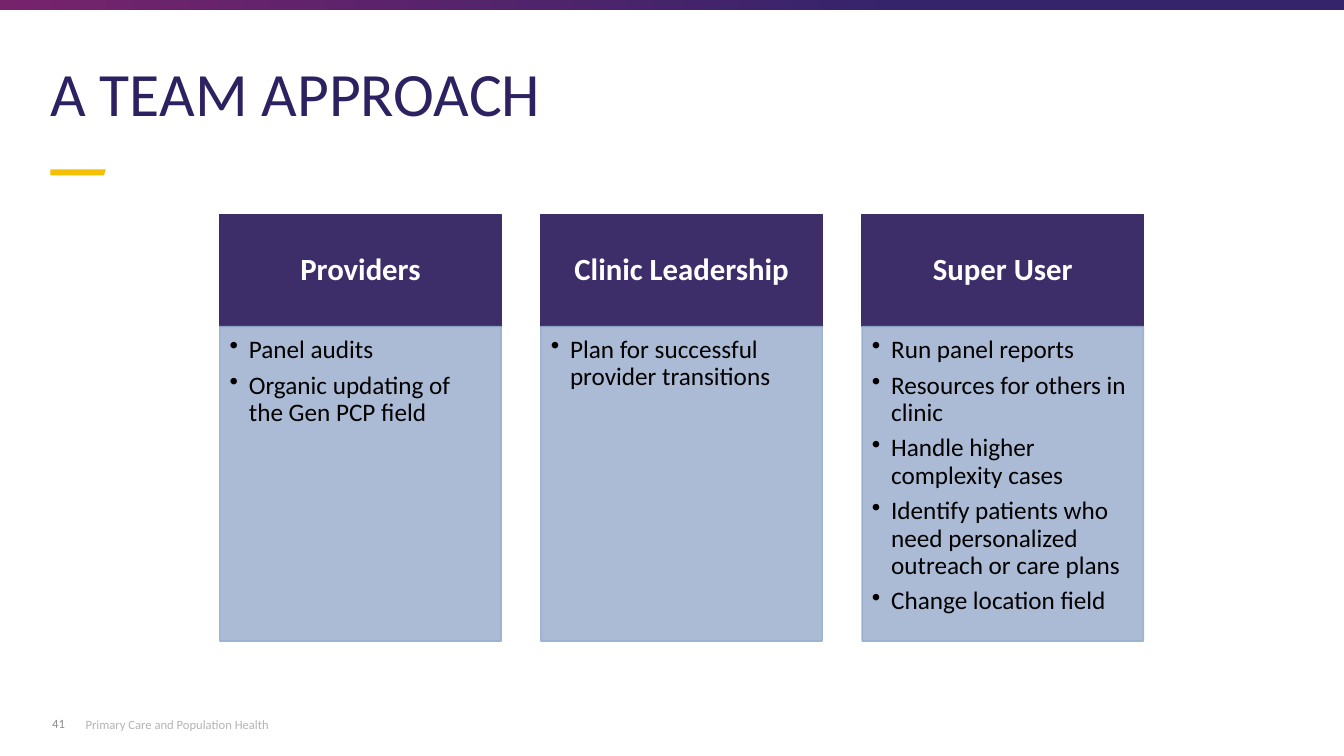
from dataclasses import dataclass
from lxml import etree
from pptx import Presentation
from pptx import util as u
from pptx.dml import color
from pptx.enum import shapes, text
from pptx.oxml import ns

FONT = "Calibri"
LEFT, STEP, WIDTH = 2.18, 3.185, 2.79
HEAD_TOP, HEAD_TALL = 2.13, 1.11
BODY_TOP, BODY_TALL = 3.24, 3.12


@dataclass
class Role:
    name: str
    tasks: list[str]


@dataclass
class Note:
    words: str
    box: tuple[float, float, float, float]
    hue: str
    anchor: text.MSO_ANCHOR


ROLES = [
    Role("Providers", ["Panel audits", "Organic updating of the Gen PCP field"]),
    Role("Clinic Leadership", ["Plan for successful provider transitions"]),
    Role("Super User", [
        "Run panel reports",
        "Resources for others in clinic",
        "Handle higher complexity cases",
        "Identify patients who need personalized outreach or care plans",
        "Change location field",
    ]),
]

NOTES = [
    Note("41", (0.42, 6.98, 0.46, 0.4), "8C8C8C", text.MSO_ANCHOR.MIDDLE),
    Note("Primary Care and Population Health", (0.75, 7.06, 2.64, 0.3),
         "B5B4B4", text.MSO_ANCHOR.TOP),
]


def rgb(code: str) -> color.RGBColor:
    return color.RGBColor.from_string(code)


def place(box: tuple) -> list:
    return [u.Inches(side) for side in box]


def write(para, words: str, size: float, hue: str, bold: bool = False) -> None:
    run = para.add_run()
    run.text = words
    run.font.name = FONT
    run.font.size = u.Pt(size)
    run.font.bold = bold
    run.font.color.rgb = rgb(hue)


def inset(frame, left: float, top: float, right: float, base: float) -> None:
    frame.word_wrap = True
    frame.margin_left, frame.margin_top = u.Inches(left), u.Inches(top)
    frame.margin_right, frame.margin_bottom = u.Inches(right), u.Inches(base)


def fade(shape, route: str, share: int) -> None:
    for tone in shape.element.spPr.xpath(route):
        etree.SubElement(tone, ns.qn("a:alpha"), val=str(share * 1000))


def block(slide, box: tuple, fill: str, line: str):
    shape = slide.shapes.add_shape(shapes.MSO_SHAPE.RECTANGLE, *place(box))
    shape.shadow.inherit = False
    shape.fill.solid()
    shape.fill.fore_color.rgb = rgb(fill)
    shape.line.color.rgb = rgb(line)
    shape.line.width = u.Pt(1)
    return shape


def bullet(para) -> None:
    props = para._p.get_or_add_pPr()
    props.set("marL", str(u.Inches(0.19)))
    props.set("indent", str(u.Inches(-0.19)))
    etree.SubElement(props, ns.qn("a:buChar"), char="•")


def draw_role(slide, role: Role, left: float) -> None:
    head = block(slide, (left, HEAD_TOP, WIDTH, HEAD_TALL), "3D2E69", "3D2E69")
    inset(head.text_frame, 0.17, 0.1, 0.17, 0.1)
    head.text_frame.vertical_anchor = text.MSO_ANCHOR.MIDDLE
    para = head.text_frame.paragraphs[0]
    para.alignment = text.PP_ALIGN.CENTER
    para.line_spacing = 0.9
    write(para, role.name, 22, "FFFFFF", True)

    body = block(slide, (left, BODY_TOP, WIDTH, BODY_TALL), "2F5597", "93B0CE")
    fade(body, "a:solidFill/a:srgbClr", 40)
    fade(body, "a:ln/a:solidFill/a:srgbClr", 90)
    frame = body.text_frame
    inset(frame, 0.1, 0.1, 0.14, 0.16)
    frame.vertical_anchor = text.MSO_ANCHOR.TOP
    for spot, task in enumerate(role.tasks):
        para = frame.add_paragraph() if spot else frame.paragraphs[0]
        bullet(para)
        para.alignment = text.PP_ALIGN.LEFT
        para.line_spacing = 0.9
        para.space_after = u.Pt(6)
        write(para, task, 18, "000000")


def draw_trim(slide) -> None:
    band = slide.shapes.add_shape(
        shapes.MSO_SHAPE.RECTANGLE, *place((-0.03, 0, 13.4, 0.1)))
    band.shadow.inherit = False
    band.line.fill.background()
    band.fill.gradient()
    band.fill.gradient_angle = 0
    for stop, (spot, hue) in zip(band.fill.gradient_stops,
                                 [(0, "77236C"), (0.67, "35246C")]):
        stop.position = spot
        stop.color.rgb = rgb(hue)

    pen = slide.shapes.build_freeform(u.Inches(0.5), u.Inches(1.68))
    pen.add_line_segments([place(spot) for spot in
                           [(1.05, 1.68), (1.03, 1.74), (0.5, 1.74)]])
    dash = pen.convert_to_shape()
    dash.shadow.inherit = False
    dash.fill.solid()
    dash.fill.fore_color.rgb = rgb("F5C001")
    dash.line.fill.background()


def draw_title(slide, words: str) -> None:
    title = slide.shapes.title
    title.left, title.top, title.width, title.height = place((0.4, 0.58, 12.48, 0.95))
    frame = title.text_frame
    inset(frame, 0.1, 0.05, 0.1, 0.05)
    frame.auto_size = text.MSO_AUTO_SIZE.NONE
    frame.vertical_anchor = text.MSO_ANCHOR.TOP
    para = frame.paragraphs[0]
    para.alignment = text.PP_ALIGN.LEFT
    para.line_spacing = 0.9
    write(para, words, 44, "2E2161")


def draw_note(slide, note: Note) -> None:
    frame = slide.shapes.add_textbox(*place(note.box)).text_frame
    frame.word_wrap = True
    frame.vertical_anchor = note.anchor
    write(frame.paragraphs[0], note.words, 9, note.hue)


def main() -> None:
    deck = Presentation()
    deck.slide_width, deck.slide_height = place((13.33, 7.5))
    slide = deck.slides.add_slide(deck.slide_layouts[5])
    draw_trim(slide)
    draw_title(slide, "A TEAM APPROACH")
    for note in NOTES:
        draw_note(slide, note)
    for rank, role in enumerate(ROLES):
        draw_role(slide, role, LEFT + rank * STEP)
    deck.save("out.pptx")


if __name__ == "__main__":
    main()
